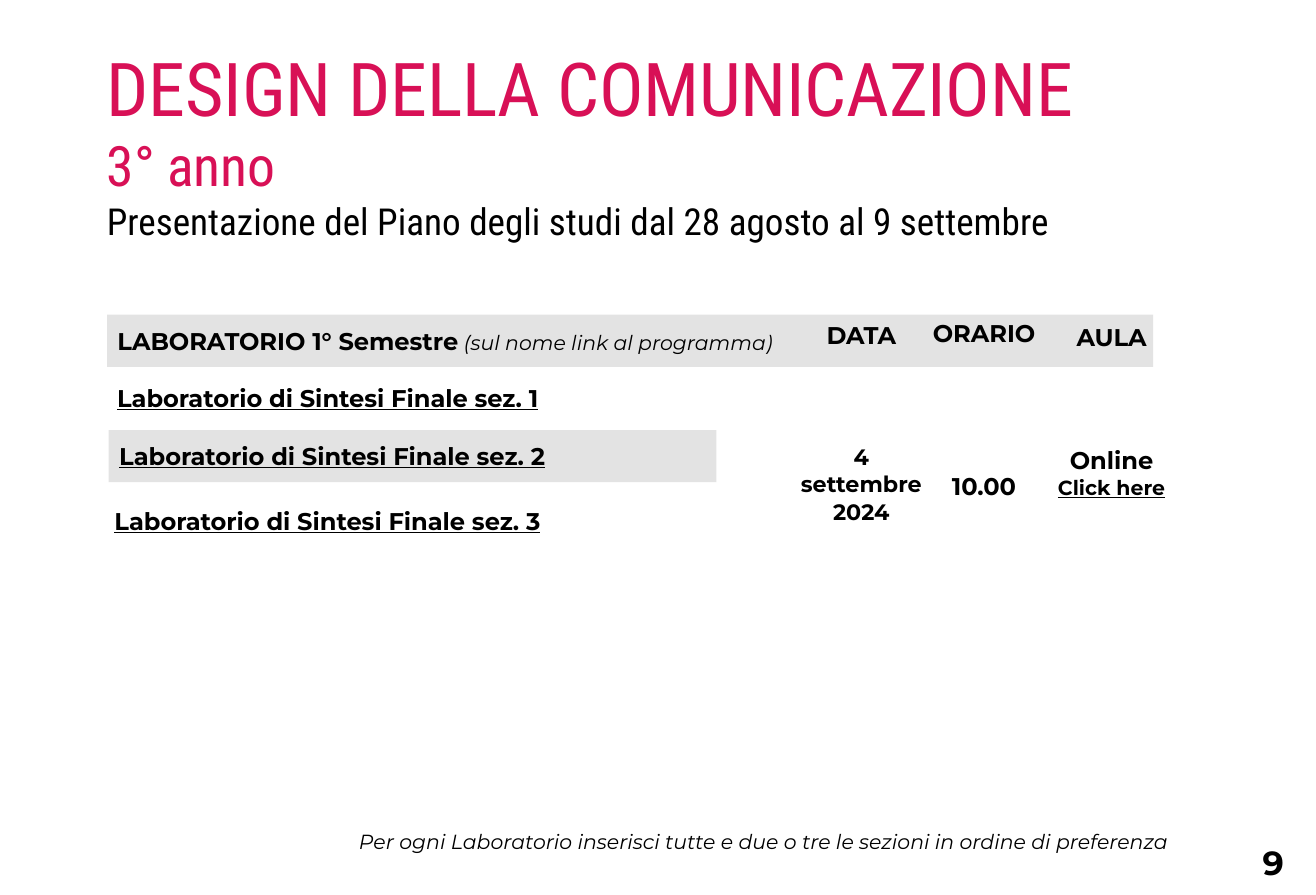
from pptx import Presentation
from pptx import util as u
from pptx.dml.color import RGBColor
from pptx.enum import shapes, text

PINK = RGBColor(0xD8, 0x10, 0x56)
BLACK = RGBColor(0, 0, 0)
GREY = RGBColor(0xE3, 0xE3, 0xE3)
HEADING_FONT, BODY_FONT = "Roboto Condensed", "Montserrat"
LEFT, CENTER, RIGHT = text.PP_ALIGN.LEFT, text.PP_ALIGN.CENTER, text.PP_ALIGN.RIGHT

WIDTH, HEIGHT = u.Pt(709), u.Pt(482)
ROW_PITCH = 16.6
TEXT_HEIGHT = 15.8
BAND_HEIGHT = 5.83
LABEL_HEIGHT = 3.44

TITLE = [[
    ("DESIGN DELLA COMUNICAZIONE", dict(size=40, color=PINK, spacing=-10)),
    ("\n", {}),
    ("3° anno", dict(size=30, color=PINK, spacing=-10)),
    ("\n", {}),
    ("Presentazione del Piano degli studi dal 28 agosto al 9 settembre", dict(size=20)),
]]
LAB_HEADER = [[
    ("LABORATORIO 1° Semestre", dict(bold=True)),
    (" ", dict(size=12, italic=True)),
    ("(sul nome link al programma)", dict(size=11, italic=True)),
]]
BANDS = [(8.15, 35.16, 79.49), (8.25, 48.05, 46.19)]
SECTIONS = [(1, 8.9, 42.65), (2, 9.06, 49.13), (3, 8.7, 56.4)]
COLUMNS = [
    ("DATA", 60.43, 35.68, 10.05, 33.8, 4,
     [[("4 settembre", dict(size=12))], [("2024", dict(size=12))]]),
    ("ORARIO", 70.71, 35.38, 8.12, 31.4, 5, [[("10.00", {})]]),
    ("AULA", 79.7, 35.82, 9.54, 24.4, 4,
     [[("Online", {})], [("Click here", dict(size=11, underline=True))]]),
]
NOTE = "Per ogni Laboratorio inserisci tutte e due o tre le sezioni in ordine di preferenza"
PAGE = "9"


def place(left, top, width, height):
    """Turn percentages of the slide into lengths."""
    return [int(share * side / 100) for share, side in
            ((left, WIDTH), (top, HEIGHT), (width, WIDTH), (height, HEIGHT))]


def add_text(slide, lines, box, align=LEFT, font=BODY_FONT, gaps=(1,), **defaults):
    """Write lines of formatted runs in a text box."""
    frame = slide.shapes.add_textbox(*place(*box)).text_frame
    frame.word_wrap = True
    frame.margin_left = frame.margin_right = frame.margin_bottom = 0
    frame.margin_top = u.Inches(0.01)
    for index, line in enumerate(lines):
        paragraph = frame.add_paragraph() if index else frame.paragraphs[0]
        paragraph.alignment = align
        paragraph.space_before = u.Pt(gaps[index])
        for words, own in line:
            if words == "\n":
                paragraph.add_line_break()
                continue
            style = {**defaults, **own}
            run = paragraph.add_run()
            run.text = words
            run.font.name = font
            run.font.size = u.Pt(style.get("size", 13))
            run.font.bold = style.get("bold", False)
            run.font.italic = style.get("italic", False)
            run.font.underline = style.get("underline", False)
            run.font.color.rgb = style.get("color", BLACK)
            if "spacing" in style:
                run._r.get_or_add_rPr().set("spc", str(style["spacing"]))


def add_band(slide, left, top, width):
    """Draw a grey row background."""
    band = slide.shapes.add_shape(
        shapes.MSO_SHAPE.RECTANGLE, *place(left, top, width, BAND_HEIGHT))
    band.shadow.inherit = False
    band.fill.solid()
    band.fill.fore_color.rgb = GREY
    band.line.fill.background()


def main():
    """Build the slide."""
    deck = Presentation()
    deck.slide_width, deck.slide_height = WIDTH, HEIGHT
    slide = deck.slides.add_slide(deck.slide_layouts[6])

    add_text(slide, TITLE, (8.12, 4.55, 82.34, 22.87), font=HEADING_FONT)
    for band in BANDS:
        add_band(slide, *band)
    add_text(slide, LAB_HEADER, (8.93, 36.28, 51.47, LABEL_HEIGHT))
    for number, left, top in SECTIONS:
        add_text(slide, [[(f"Laboratorio di Sintesi Finale sez. {number}", {})]],
                 (left, top, 35.7, LABEL_HEIGHT), bold=True, underline=True)
    for header, left, top, width, height, row, values in COLUMNS:
        add_text(slide, [[(header, {})], *values], (left, top, width, height),
                 align=CENTER, gaps=(1, row * ROW_PITCH - TEXT_HEIGHT, 0.5), bold=True)
    add_text(slide, [[(NOTE, {})]], (12.79, 92.48, 76.04, 2.99),
             align=RIGHT, size=11, italic=True)
    add_text(slide, [[(PAGE, {})]], (95.95, 93.9, 2.3, 5.08), size=18, bold=True)
    deck.save("out.pptx")


if __name__ == "__main__":
    main()
